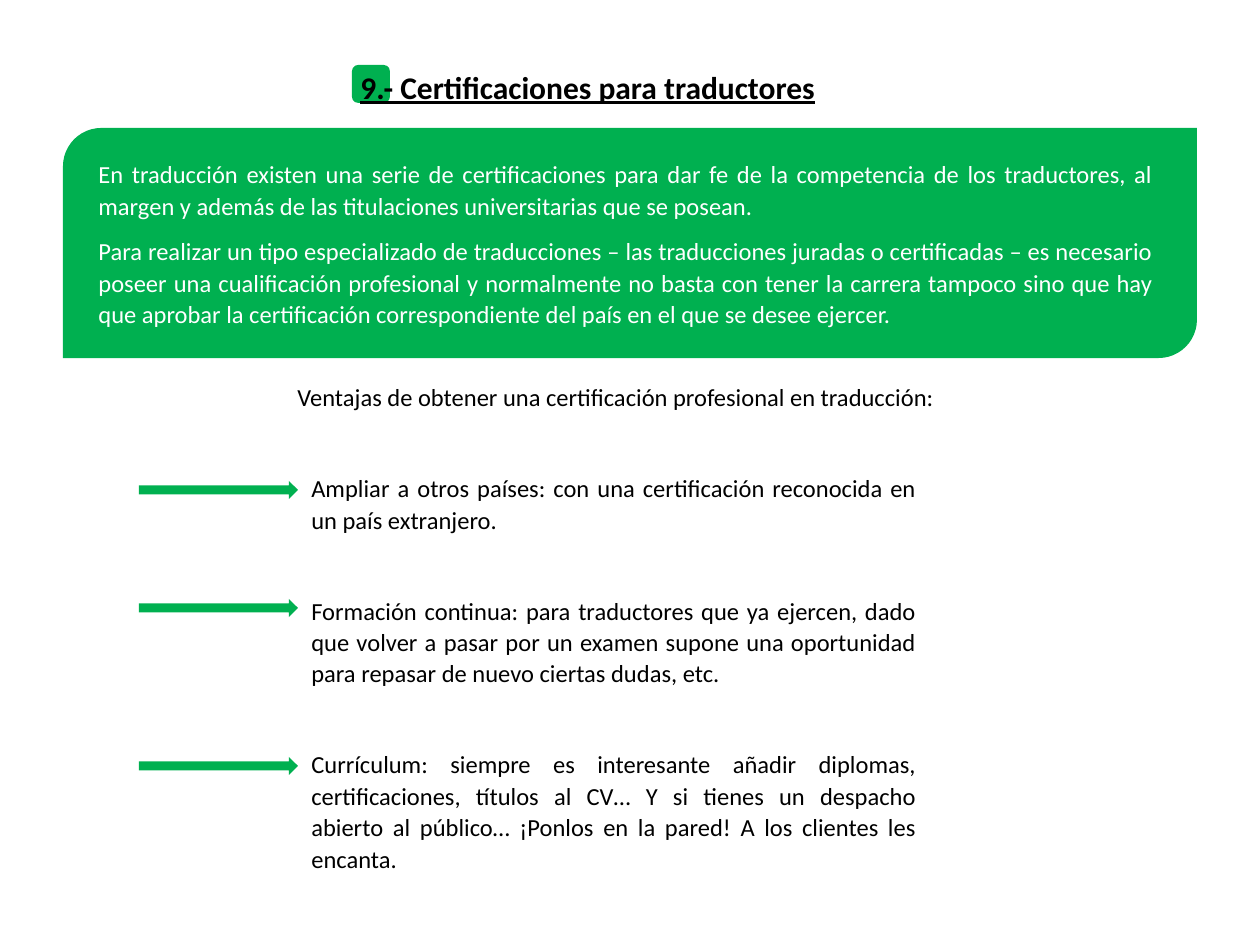
from dataclasses import dataclass

from pptx import Presentation
from pptx.dml.color import RGBColor
from pptx.enum.shapes import MSO_SHAPE
from pptx.enum.text import MSO_AUTO_SIZE, PP_ALIGN
from pptx.slide import Slide
from pptx.util import Emu, Pt

BAND = MSO_SHAPE.ROUND_2_DIAG_RECTANGLE
BADGE = MSO_SHAPE.ROUNDED_RECTANGLE
ARROW = MSO_SHAPE.RIGHT_ARROW
FIT = MSO_AUTO_SIZE.SHAPE_TO_FIT_TEXT
LEFT, JUST = PP_ALIGN.LEFT, PP_ALIGN.JUSTIFY
SCALE = 914400 / 126  # EMU per px


@dataclass(frozen=True)
class Theme:
    green: RGBColor = RGBColor(0x00, 0xB0, 0x50)
    black: RGBColor = RGBColor(0x00, 0x00, 0x00)
    white: RGBColor = RGBColor(0xFF, 0xFF, 0xFF)
    font: str = "Calibri"
    head: int = 18
    body: int = 14
    line: float = 1.07
    after: int = 8


THEME = Theme()


@dataclass(frozen=True)
class Box:
    x: int
    y: int
    w: int
    h: int

    def emu(self) -> list[Emu]:
        return [Emu(round(v * SCALE)) for v in (self.x, self.y, self.w, self.h)]


@dataclass(frozen=True)
class Block:
    box: Box
    paras: tuple[str, ...]
    color: RGBColor = THEME.black
    size: int = THEME.body
    align: PP_ALIGN = JUST
    strong: bool = False  # bold and underlined
    wrap: bool = True
    gap: int = 0  # extra points between paragraphs


def draw_shape(slide: Slide, kind: MSO_SHAPE, box: Box) -> None:
    shape = slide.shapes.add_shape(kind, *box.emu())
    shape.shadow.inherit = False
    shape.fill.solid()
    shape.fill.fore_color.rgb = THEME.green
    shape.line.fill.background()


def draw_text(slide: Slide, block: Block) -> None:
    frame = slide.shapes.add_textbox(*block.box.emu()).text_frame
    frame.word_wrap = block.wrap
    frame.auto_size = FIT
    frame.text = "\n".join(block.paras)
    for i, para in enumerate(frame.paragraphs):
        para.alignment = block.align
        para.line_spacing = THEME.line
        para.space_before = Pt(block.gap if i else 0)
        para.space_after = Pt(THEME.after)
        for run in para.runs:
            font = run.font
            font.name = THEME.font
            font.size = Pt(block.size)
            font.color.rgb = block.color
            font.bold = font.underline = block.strong


SHAPES = (
    (BAND, Box(63, 128, 1134, 230)),
    (BADGE, Box(352, 65, 38, 38)),
)
ARROWS = (481, 599, 757)  # tops, one beside each advantage

BLOCKS = (
    # Title
    Block(Box(348, 59, 485, 54), ("9.- Certificaciones para traductores",),
          size=THEME.head, align=LEFT, strong=True, wrap=False),
    # Introduction on the green band
    Block(Box(86, 151, 1080, 185), (
        "En traducción existen una serie de certificaciones para dar fe de la "
        "competencia de los traductores, al margen y además de las titulaciones "
        "universitarias que se posean.",
        "Para realizar un tipo especializado de traducciones – las traducciones "
        "juradas o certificadas – es necesario poseer una cualificación profesional "
        "y normalmente no basta con tener la carrera tampoco sino que hay que aprobar "
        "la certificación correspondiente del país en el que se desee ejercer.",
    ), color=THEME.white),
    # Lead-in
    Block(Box(285, 374, 775, 44), (
        "Ventajas de obtener una certificación profesional en traducción:",)),
    # Advantages
    Block(Box(299, 465, 630, 418), (
        "Ampliar a otros países: con una certificación reconocida en un país "
        "extranjero.",
        "Formación continua: para traductores que ya ejercen, dado que volver a "
        "pasar por un examen supone una oportunidad para repasar de nuevo ciertas "
        "dudas, etc.",
        "Currículum: siempre es interesante añadir diplomas, certificaciones, "
        "títulos al CV… Y si tienes un despacho abierto al público… ¡Ponlos en la "
        "pared! A los clientes les encanta.",
    ), gap=26),
)


def main() -> None:
    deck = Presentation()
    deck.slide_width, deck.slide_height = Box(0, 0, 1260, 945).emu()[2:]
    slide = deck.slides.add_slide(deck.slide_layouts[6])
    for kind, box in SHAPES:
        draw_shape(slide, kind, box)
    for block in BLOCKS:
        draw_text(slide, block)
    for top in ARROWS:
        draw_shape(slide, ARROW, Box(139, top, 159, 18))
    deck.save("out.pptx")


if __name__ == "__main__":
    main()
